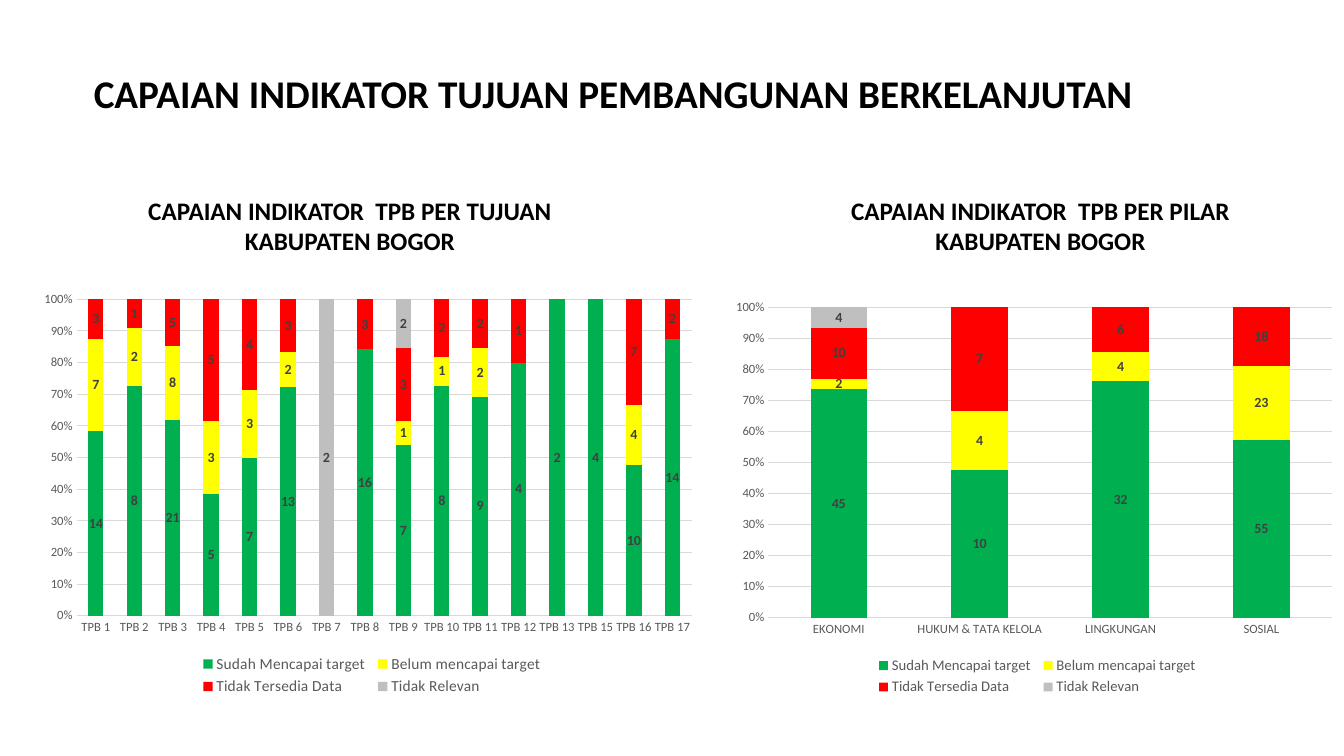
from dataclasses import dataclass

from lxml import etree
from pptx import Presentation
from pptx.chart.data import CategoryChartData
from pptx.dml.color import RGBColor
from pptx.enum import chart as kinds, text
from pptx.oxml import ns
from pptx.util import Inches, Pt


@dataclass(frozen=True)
class Theme:
    font: str = "Calibri"
    black: str = "000000"
    axis_text: str = "595959"
    label_text: str = "404040"
    grid: str = "D9D9D9"
    series: tuple = ("00B050", "FFFF00", "FF0000", "BFBFBF")
    title: float = 28
    heading: float = 18
    label: float = 10
    axis: float = 9


theme = Theme()


def style(font, size, color, bold=False):
    font.name, font.size, font.bold = theme.font, Pt(size), bold
    font.color.rgb = RGBColor.from_string(color)


def place(element, position, area, frame, inner=False):
    """Fix a chart part at area (slide inches) inside the chart frame."""
    for old in element.findall(ns.qn("c:layout")):
        element.remove(old)
    layout = etree.Element(ns.qn("c:layout"))
    manual = etree.SubElement(layout, ns.qn("c:manualLayout"))
    left, top, width, height = area
    values = {
        "xMode": "edge", "yMode": "edge",
        "x": (left - frame[0]) / frame[2], "y": (top - frame[1]) / frame[3],
        "w": width / frame[2], "h": height / frame[3],
    }
    if inner:
        values = {"layoutTarget": "inner", **values}
    for name, value in values.items():
        etree.SubElement(manual, ns.qn(f"c:{name}")).set("val", str(value))
    element.insert(position, layout)


statuses = ("Sudah Mencapai target", "Belum mencapai target",
            "Tidak Tersedia Data", "Tidak Relevan")
goals = [f"TPB {number}" for number in range(1, 18) if number != 14]
panels = [
    {
        "heading": "CAPAIAN INDIKATOR  TPB PER TUJUAN",
        "heading_left": 0.74,
        "frame": (0.31, 2.81, 6.69, 4.13),
        "plot": (0.76, 2.97, 6.1, 3.14),
        "legend": (1.94, 6.46, 3.5, 0.48),
        "legend_size": 11,
        "categories": goals,
        "values": (
            (14, 8, 21, 5, 7, 13, None, 16, 7, 8, 9, 4, 2, 4, 10, 14),
            (7, 2, 8, 3, 3, 2, None, None, 1, 1, 2, None, None, None, 4, None),
            (3, 1, 5, 5, 4, 3, None, 3, 3, 2, 2, 1, None, None, 7, 2),
            (None,) * 6 + (2, None, 2) + (None,) * 7,
        ),
    },
    {
        "heading": "CAPAIAN INDIKATOR  TPB PER PILAR",
        "heading_left": 7.59,
        "frame": (7.17, 2.9, 6.17, 4.05),
        "plot": (7.62, 3.05, 5.59, 3.08),
        "legend": (8.64, 6.48, 3.3, 0.46),
        "legend_size": 10.5,
        "categories": ["EKONOMI", "HUKUM & TATA KELOLA", "LINGKUNGAN", "SOSIAL"],
        "values": ((45, 10, 32, 55), (2, 4, 4, 23), (10, 7, 6, 18),
                   (4, None, None, None)),
    },
]

deck = Presentation()
deck.slide_width, deck.slide_height = Inches(13.33), Inches(7.5)
page = deck.slides.add_slide(deck.slide_layouts[5])

title = page.shapes.title
title.left, title.top = Inches(0.83), Inches(0.64)
title.width, title.height = Inches(11.76), Inches(0.57)
title.text_frame.text = "CAPAIAN INDIKATOR TUJUAN PEMBANGUNAN BERKELANJUTAN"
title.text_frame.vertical_anchor = text.MSO_ANCHOR.MIDDLE
title.text_frame.paragraphs[0].alignment = text.PP_ALIGN.LEFT
style(title.text_frame.paragraphs[0].runs[0].font, theme.title, theme.black, True)

for panel in panels:
    box = page.shapes.add_textbox(Inches(panel["heading_left"]), Inches(1.89),
                                  Inches(5.46), Inches(0.71))
    box.text_frame.word_wrap = True
    box.text_frame.text = panel["heading"] + "\nKABUPATEN BOGOR"
    for para in box.text_frame.paragraphs:
        para.alignment = text.PP_ALIGN.CENTER
        style(para.runs[0].font, theme.heading, theme.black, True)

    data = CategoryChartData()
    data.categories = panel["categories"]
    for status, values in zip(statuses, panel["values"]):
        data.add_series(status, values)
    chart = page.shapes.add_chart(
        kinds.XL_CHART_TYPE.COLUMN_STACKED_100,
        *map(Inches, panel["frame"]), data).chart
    style(chart.font, theme.label, theme.black)
    chart.has_title = False

    columns = chart.plots[0]
    columns.gap_width, columns.overlap = 150, 100
    columns.vary_by_categories = False
    for series, color in zip(columns.series, theme.series):
        series.format.fill.solid()
        series.format.fill.fore_color.rgb = RGBColor.from_string(color)
        labels = series.data_labels
        labels.show_value = True
        labels.position = kinds.XL_LABEL_POSITION.CENTER
        style(labels.font, theme.label, theme.label_text, True)

    for axis in (chart.category_axis, chart.value_axis):
        axis.major_tick_mark = axis.minor_tick_mark = kinds.XL_TICK_MARK.NONE
        style(axis.tick_labels.font, theme.axis, theme.axis_text)
    chart.value_axis.tick_labels.number_format = "0%"
    chart.value_axis.tick_labels.number_format_is_linked = False
    chart.value_axis.major_unit = 0.1
    chart.value_axis.format.line.fill.background()
    for line in (chart.category_axis.format.line,
                 chart.value_axis.major_gridlines.format.line):
        line.width = Pt(0.75)
        line.color.rgb = RGBColor.from_string(theme.grid)

    chart.has_legend = True
    chart.legend.position = kinds.XL_LEGEND_POSITION.BOTTOM
    chart.legend.include_in_layout = False
    style(chart.legend.font, panel["legend_size"], theme.axis_text)

    plot_area = chart.element.find(".//" + ns.qn("c:plotArea"))
    legend = chart.element.find(".//" + ns.qn("c:legend"))
    place(plot_area, 0, panel["plot"], panel["frame"], inner=True)
    place(legend, 1, panel["legend"], panel["frame"])

deck.save("out.pptx")
